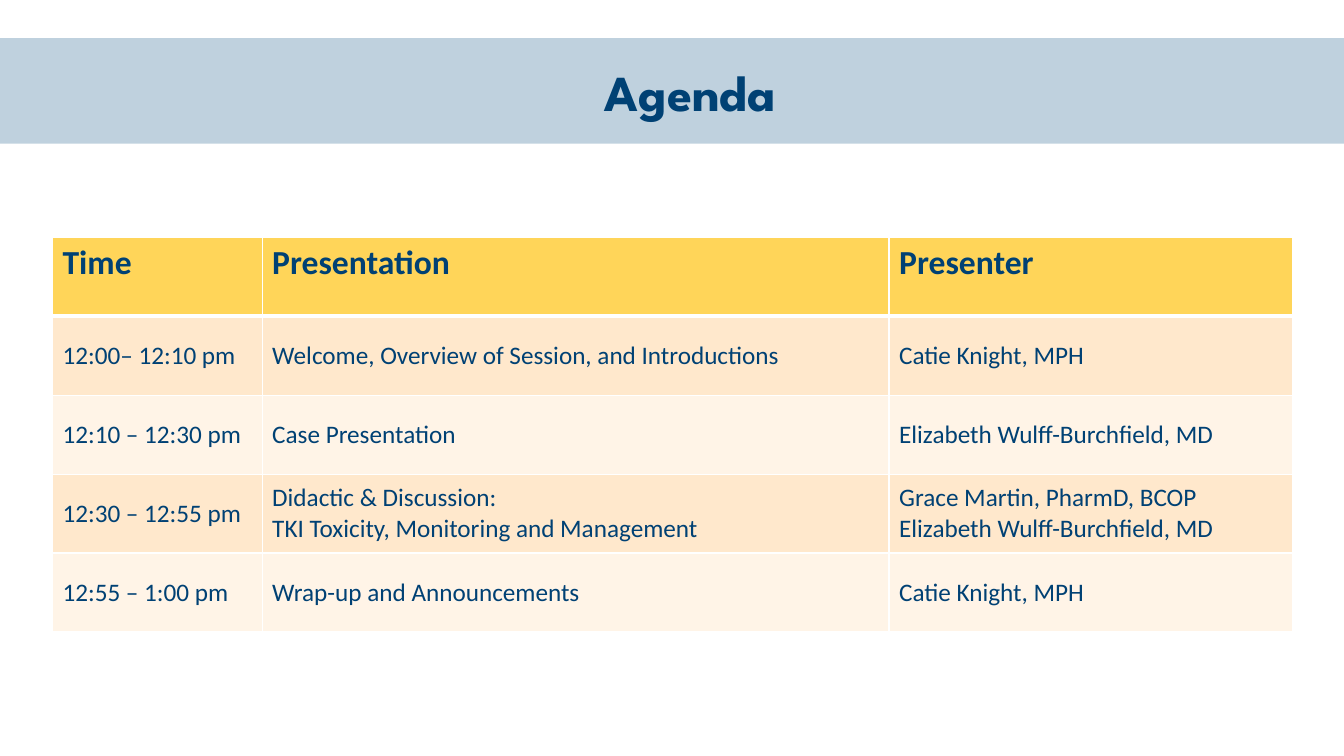
"""Build the agenda slide: a title band above a schedule table."""
from lxml import etree
from pptx import Presentation
from pptx.dml.color import RGBColor
from pptx.enum import shapes, text
from pptx.oxml import ns
from pptx.util import Pt

COLORS = {"navy": "004174", "band": "00497F", "gold": "FFC000",
          "peach": "FFE8CC", "cream": "FFF4E7", "white": "FFFFFF"}
TITLE = {"name": "League Spartan", "size": Pt(36), "bold": True}
HEADER = {"name": "Calibri", "size": Pt(24), "bold": True}
BODY = {"name": "Calibri", "size": Pt(18), "bold": False}
WIDTHS = (149.76, 447.84, 288)
ROW_HEIGHT = 56.4
AGENDA = [
    ("Time", "Presentation", "Presenter"),
    ("12:00– 12:10 pm", "Welcome, Overview of Session, and Introductions",
     "Catie Knight, MPH"),
    ("12:10 – 12:30 pm", "Case Presentation", "Elizabeth Wulff-Burchfield, MD"),
    ("12:30 – 12:55 pm",
     "Didactic & Discussion:\nTKI Toxicity, Monitoring and Management",
     "Grace Martin, PharmD, BCOP\nElizabeth Wulff-Burchfield, MD"),
    ("12:55 – 1:00 pm", "Wrap-up and Announcements", "Catie Knight, MPH"),
]


def set_text(tf, content, fmt):
    tf.text = content
    for p in tf.paragraphs:
        for r in p.runs:
            r.font.color.rgb = RGBColor.from_string(COLORS["navy"])
            for name, value in fmt.items():
                setattr(r.font, name, value)


def set_fill(fill, color, parent, opacity=100):
    fill.solid()
    fill.fore_color.rgb = RGBColor.from_string(COLORS[color])
    if opacity < 100:
        clr = parent.find(ns.qn("a:solidFill")).find(ns.qn("a:srgbClr"))
        etree.SubElement(clr, ns.qn("a:alpha"), val=str(opacity * 1000))


def set_borders(tc_pr, widths):
    for side, width in widths.items():
        ln = etree.SubElement(tc_pr, ns.qn(f"a:ln{side}"), w=str(Pt(width)))
        fill = etree.SubElement(ln, ns.qn("a:solidFill"))
        etree.SubElement(fill, ns.qn("a:srgbClr"), val=COLORS["white"])


def add_band(s):
    sp = s.shapes.add_shape(shapes.MSO_SHAPE.RECTANGLE,
                            0, Pt(27.2), Pt(960), Pt(75.5))
    sp.shadow.inherit = False
    sp.line.fill.background()
    set_fill(sp.fill, "band", sp.element.spPr, 25)
    s.shapes.element.insert(2, sp.element)


def set_title(s, content):
    sp = s.shapes.title
    box = {"left": 413.3, "top": 39.6, "width": 160, "height": 51}
    for name, value in box.items():
        setattr(sp, name, Pt(value))
    tf = sp.text_frame
    set_text(tf, content, TITLE)
    tf.word_wrap = False
    tf.vertical_anchor = text.MSO_ANCHOR.MIDDLE
    tf.paragraphs[0].alignment = text.PP_ALIGN.CENTER


def fill_cell(cell, content, row):
    tc_pr = cell._tc.get_or_add_tcPr()
    set_borders(tc_pr, {"L": 1, "R": 1, "T": 3 if row == 1 else 1,
                        "B": 3 if row == 0 else 1})
    if row == 0:
        set_fill(cell.fill, "gold", tc_pr, 65)
        set_text(cell.text_frame, content, HEADER)
    else:
        set_fill(cell.fill, "peach" if row % 2 else "cream", tc_pr)
        set_text(cell.text_frame, content, BODY)
        cell.vertical_anchor = text.MSO_ANCHOR.MIDDLE


def add_agenda(s):
    table = s.shapes.add_table(len(AGENDA), len(WIDTHS), Pt(37.5), Pt(169.5),
                               Pt(sum(WIDTHS)), Pt(ROW_HEIGHT * len(AGENDA))).table
    for column, width in zip(table.columns, WIDTHS):
        column.width = Pt(width)
    for i, entries in enumerate(AGENDA):
        table.rows[i].height = Pt(ROW_HEIGHT)
        for j, content in enumerate(entries):
            fill_cell(table.cell(i, j), content, i)


def main():
    prs = Presentation()
    prs.slide_width, prs.slide_height = Pt(960), Pt(540)
    s = prs.slides.add_slide(prs.slide_layouts[5])
    add_band(s)
    set_title(s, "Agenda")
    add_agenda(s)
    prs.save("out.pptx")


if __name__ == "__main__":
    main()
